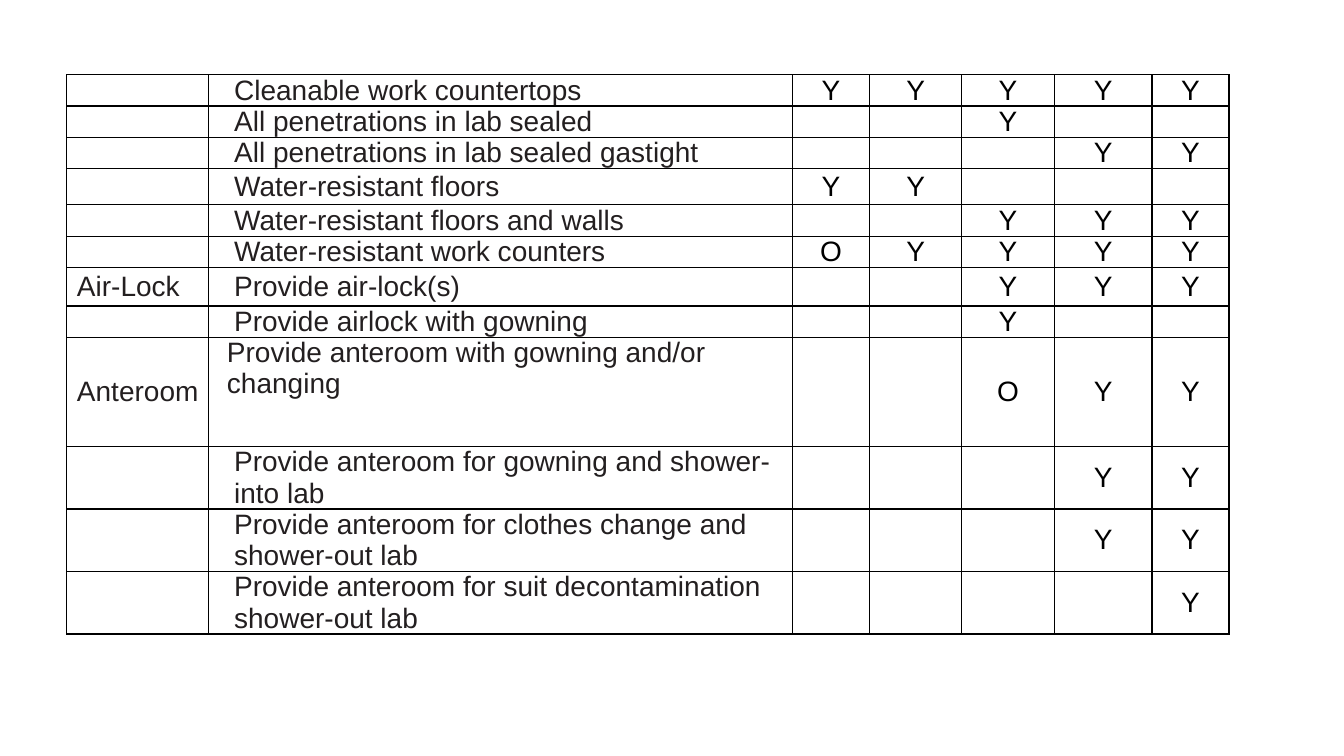
from lxml.etree import SubElement
from pptx import Presentation
from pptx.dml.color import RGBColor
from pptx.enum.text import MSO_ANCHOR, PP_ALIGN
from pptx.oxml.ns import qn
from pptx.util import Cm, Pt

WHITE = RGBColor(0xFF, 0xFF, 0xFF)
BLACK = RGBColor(0x00, 0x00, 0x00)
INK = RGBColor(0x23, 0x1F, 0x20)

COLUMN_WIDTHS = [3.58, 14.71, 1.94, 2.33, 2.33, 2.46, 1.94]
TEXT_INDENTS = [0.08, 0.46]
ANTEROOM_INDENT = 0.28
ONE_LINE, TWO_LINES = 0.79, 1.57

REQUIREMENTS = [
    (ONE_LINE, "", "Cleanable work countertops", "YYYYY"),
    (ONE_LINE, "", "All penetrations in lab sealed", "--Y--"),
    (ONE_LINE, "", "All penetrations in lab sealed gastight", "---YY"),
    (0.91, "", "Water-resistant floors", "YY---"),
    (ONE_LINE, "", "Water-resistant floors and walls", "--YYY"),
    (ONE_LINE, "", "Water-resistant work counters", "OYYYY"),
    (0.97, "Air-Lock", "Provide air-lock(s)", "--YYY"),
    (ONE_LINE, "", "Provide airlock with gowning", "--Y--"),
    (2.75, "Anteroom", "Provide anteroom with gowning and/or changing", "--OYY"),
    (TWO_LINES, "", "Provide anteroom for gowning and shower-into lab", "---YY"),
    (TWO_LINES, "", "Provide anteroom for clothes change and shower-out lab", "---YY"),
    (TWO_LINES, "", "Provide anteroom for suit decontamination shower-out lab", "----Y"),
]


def style_cell(cell):
    properties = cell._tc.get_or_add_tcPr()
    for side in ("a:lnL", "a:lnR", "a:lnT", "a:lnB"):
        line = SubElement(properties, qn(side), w=str(Pt(1)))
        fill = SubElement(line, qn("a:solidFill"))
        SubElement(fill, qn("a:srgbClr"), val=str(BLACK))
    cell.fill.solid()
    cell.fill.fore_color.rgb = WHITE
    cell.margin_left = cell.margin_right = Cm(0.18)
    cell.margin_top = cell.margin_bottom = 0
    cell.vertical_anchor = MSO_ANCHOR.MIDDLE


def write_cell(cell, text, color, indent=None):
    para = cell.text_frame.paragraphs[0]
    para.text = text
    if indent is None:
        para.alignment = PP_ALIGN.CENTER
    else:
        para._p.get_or_add_pPr().set("marL", str(Cm(indent)))
    for span in para.runs:
        span.font.name = "Arial"
        span.font.size = Pt(20)
        span.font.color.rgb = color


def add_requirements_table(page, left, top):
    heights = [row[0] for row in REQUIREMENTS]
    frame = page.shapes.add_table(
        len(heights), len(COLUMN_WIDTHS),
        Cm(left), Cm(top), Cm(sum(COLUMN_WIDTHS)), Cm(sum(heights)),
    )
    table = frame.table
    table.first_row = table.horz_banding = False
    for column, width in zip(table.columns, COLUMN_WIDTHS):
        column.width = Cm(width)
    for row, (height, area, requirement, marks) in zip(table.rows, REQUIREMENTS):
        row.height = Cm(height)
        texts = [area, requirement, *marks.replace("-", " ")]
        for number, (cell, text) in enumerate(zip(row.cells, texts)):
            style_cell(cell)
            if not text.strip():
                continue
            if number < len(TEXT_INDENTS):
                write_cell(cell, text, INK, TEXT_INDENTS[number])
            else:
                write_cell(cell, text, BLACK)
        if area == "Anteroom":
            write_cell(row.cells[1], requirement, INK, ANTEROOM_INDENT)
            row.cells[1].vertical_anchor = MSO_ANCHOR.TOP


def main():
    deck = Presentation()
    deck.slide_width, deck.slide_height = Cm(33.87), Cm(19.05)
    page = deck.slides.add_slide(deck.slide_layouts[6])
    add_requirements_table(page, 1.68, 1.88)
    deck.save("out.pptx")


if __name__ == "__main__":
    main()
